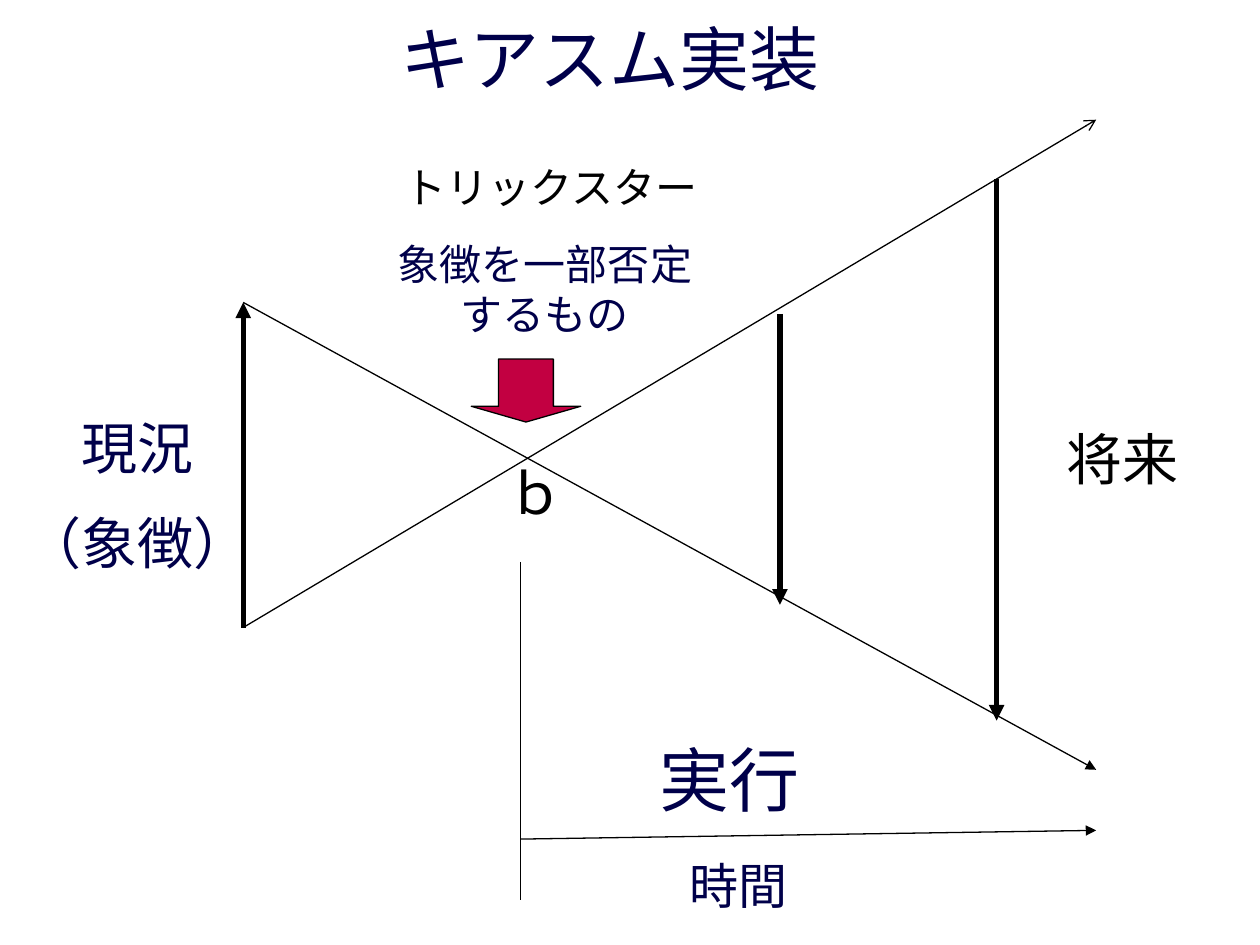
from typing import NamedTuple, Optional

from lxml.etree import SubElement
from pptx import Presentation
from pptx.dml.color import RGBColor
from pptx.enum.shapes import MSO_CONNECTOR as Link, MSO_SHAPE as Shape
from pptx.enum.text import MSO_ANCHOR as Anchor, PP_ALIGN as Align
from pptx.oxml.ns import qn
from pptx.util import Pt

FONT = "Noto Sans CJK JP"
NAVY = RGBColor(0x00, 0x00, 0x4A)
BLACK = RGBColor(0x00, 0x00, 0x00)
RED = RGBColor(0xC2, 0x00, 0x41)
THIN, THICK = 0.75, 3


class Label(NamedTuple):
    text: str
    left: float
    top: float
    width: float
    height: float
    size: float
    color: RGBColor = NAVY
    wrap: bool = True
    anchor: Anchor = Anchor.TOP


class Line(NamedTuple):
    x1: float
    y1: float
    x2: float
    y2: float
    width: float = THIN
    head: Optional[str] = "triangle"


LEFT, RIGHT = 139, 626.4    # ends of the crossing lines
HIGH, LOW = 172.8, 358.6    # ends of the present-state arrow
START = 297.4               # where execution begins

LINES = [
    Line(LEFT, LOW, LEFT, HIGH, THICK),
    Line(LEFT, HIGH, RIGHT, 439.9),
    Line(LEFT, LOW, RIGHT, 68.4, head="arrow"),
    Line(569.5, 102.2, 569.5, 411.8, THICK),
    Line(445.7, 179.3, 445.7, 345.6, THICK),
    Line(START, 321.1, START, 514.1, head=None),
    Line(START, 479.5, RIGHT, 474.5),
]

LABELS = [
    Label("キアスム実装", 42.5, 3.6, 612, 59, 40, anchor=Anchor.MIDDLE),
    Label("ｂ", 257.8, 258.5, 96.5, 45.4, 32, BLACK),
    Label("現況\n（象徴）", 6.5, 232.6, 144, 104.4, 32, wrap=False),
    Label("将来", 597, 239, 89.3, 45.4, 32, BLACK, wrap=False),
    Label("トリックスター", 218.2, 88.6, 193, 36, 24, BLACK),
    Label("象徴を一部否定するもの", 212.4, 132.5, 198, 64.8, 24),
    Label("時間", 337, 485.3, 170, 40.3, 28),
    Label("実行", 314.6, 417.6, 204.5, 54.7, 40),
]


def write(frame, text: str, *, size: float, color: RGBColor) -> None:
    """Fill a frame with centred paragraphs, one for each line of text."""
    for i, part in enumerate(text.split("\n")):
        para = frame.add_paragraph() if i else frame.paragraphs[0]
        para.alignment = Align.CENTER
        if i:
            para.space_before = Pt(size / 2)
        run = para.add_run()
        run.text = part
        font = run.font
        font.size, font.name = Pt(size), FONT
        font.color.rgb = color
        SubElement(font._element, qn("a:ea"), typeface=FONT)


def add_label(slide, label: Label) -> None:
    box = slide.shapes.add_textbox(
        Pt(label.left), Pt(label.top), Pt(label.width), Pt(label.height))
    frame = box.text_frame
    frame.word_wrap = label.wrap
    frame.vertical_anchor = label.anchor
    write(frame, label.text, size=label.size, color=label.color)


def add_line(slide, line: Line) -> None:
    link = slide.shapes.add_connector(
        Link.STRAIGHT, Pt(line.x1), Pt(line.y1), Pt(line.x2), Pt(line.y2))
    link.line.color.rgb = BLACK
    link.line.width = Pt(line.width)
    props = link._element.spPr
    if line.head:
        SubElement(props.find(qn("a:ln")), qn("a:tailEnd"), type=line.head)
    SubElement(props, qn("a:effectLst"))


def add_arrow(slide) -> None:
    arrow = slide.shapes.add_shape(
        Shape.DOWN_ARROW, Pt(269.3), Pt(205.2), Pt(62.6), Pt(36))
    arrow.adjustments[0], arrow.adjustments[1] = 0.5, 0.25
    arrow.shadow.inherit = False
    arrow.fill.solid()
    arrow.fill.fore_color.rgb = RED
    arrow.line.color.rgb = BLACK
    arrow.line.width = Pt(THIN)


def main() -> None:
    deck = Presentation()
    deck.slide_width, deck.slide_height = Pt(720), Pt(540)
    slide = deck.slides.add_slide(deck.slide_layouts[6])
    for line in LINES:
        add_line(slide, line)
    add_arrow(slide)
    for label in LABELS:
        add_label(slide, label)
    deck.save("out.pptx")


if __name__ == "__main__":
    main()
